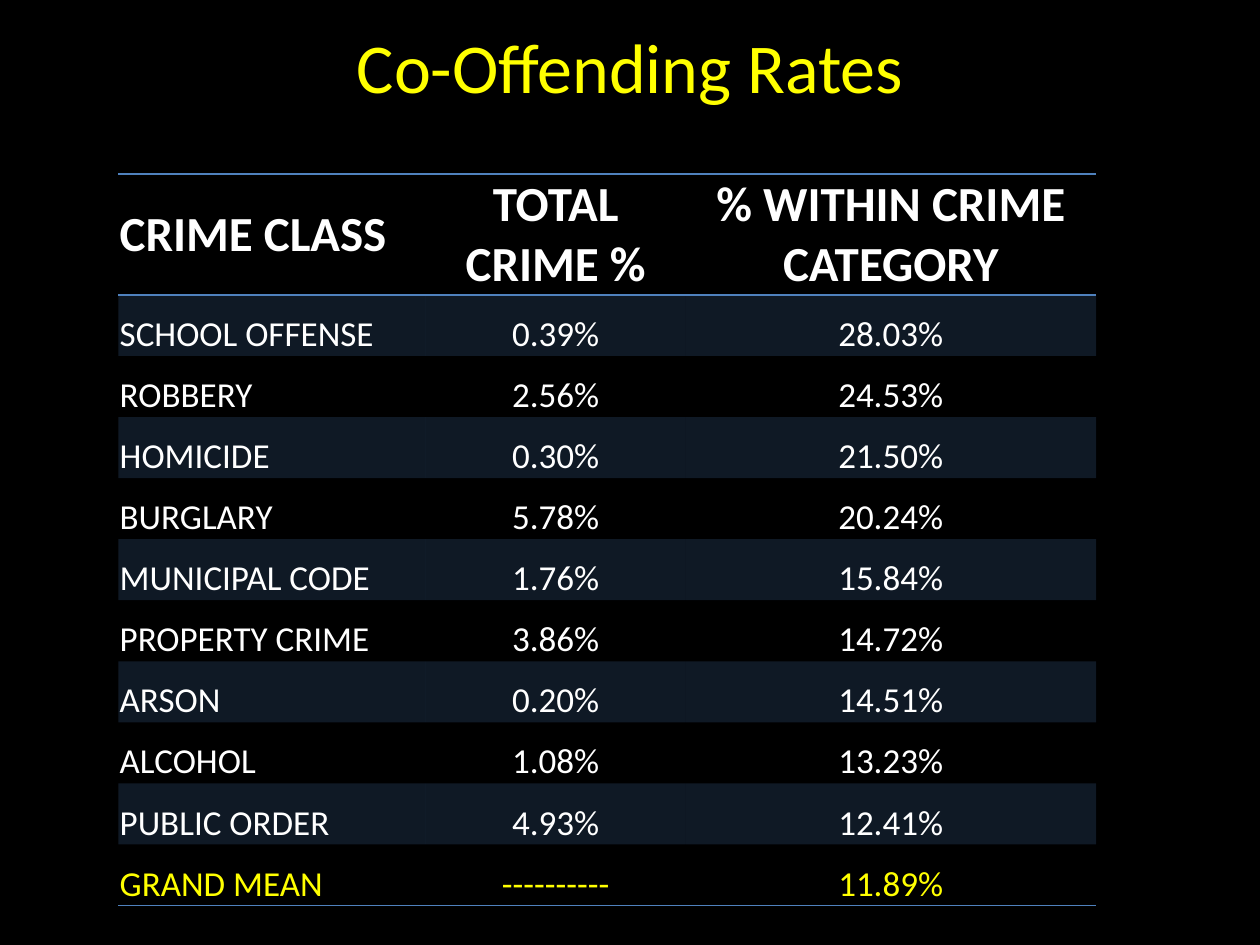
from typing import NamedTuple

from lxml.etree import SubElement
from pptx import Presentation
from pptx.dml.color import RGBColor
from pptx.enum.text import MSO_ANCHOR, PP_ALIGN
from pptx.oxml.ns import qn
from pptx.util import Inches, Pt

WIDE, HIGH = 10, 7.5
FONT = "Calibri"
HUES = {"back": "000000", "text": "FFFFFF", "mark": "FFFF00", "blue": "4F81BD"}
PLAIN = "{2D5ABB26-0587-4C30-8999-92F81FD0307C}"  # no style, no grid

# Table grid, in inches
LEFT, TOP, TALL = 0.94, 1.38, 5.8
COLS = (2.44, 2.06, 3.26)
HEAD = 0.95


class Rate(NamedTuple):
    crime: str
    total: str
    within: str


RATES = [
    Rate("CRIME CLASS", "TOTAL CRIME %", "% WITHIN CRIME CATEGORY"),
    Rate("SCHOOL OFFENSE", "0.39%", "28.03%"),
    Rate("ROBBERY", "2.56%", "24.53%"),
    Rate("HOMICIDE", "0.30%", "21.50%"),
    Rate("BURGLARY", "5.78%", "20.24%"),
    Rate("MUNICIPAL CODE", "1.76%", "15.84%"),
    Rate("PROPERTY CRIME", "3.86%", "14.72%"),
    Rate("ARSON", "0.20%", "14.51%"),
    Rate("ALCOHOL", "1.08%", "13.23%"),
    Rate("PUBLIC ORDER", "4.93%", "12.41%"),
    Rate("GRAND MEAN", "----------", "11.89%"),
]


def write(frame, text: str, *, size: int, hue: str = "text",
          bold: bool = False, align=PP_ALIGN.CENTER) -> None:
    para = frame.paragraphs[0]
    para.alignment = align
    run = para.add_run()
    run.text = text
    font = run.font
    font.name, font.size, font.bold = FONT, Pt(size), bold
    font.color.rgb = RGBColor.from_string(HUES[hue])


def rule(cell, side: str) -> None:
    """Draw a one-point border on side T or B of a cell."""
    line = SubElement(cell._tc.get_or_add_tcPr(), qn(f"a:ln{side}"), w=str(Pt(1)))
    SubElement(SubElement(line, qn("a:solidFill")), qn("a:srgbClr"), val=HUES["blue"])


def shade(cell, share: int) -> None:
    """Fill a cell with blue at a given percentage of opacity."""
    cell.fill.solid()
    cell.fill.fore_color.rgb = RGBColor.from_string(HUES["blue"])
    tint = next(cell._tc.tcPr.iterchildren(qn("a:solidFill")))[0]
    SubElement(tint, qn("a:alpha"), val=str(share * 1000))


def draw_cell(cell, text: str, row: int, col: int) -> None:
    head, last = row == 0, row == len(RATES) - 1
    cell.margin_left = cell.margin_right = cell.margin_top = Inches(0.01)
    cell.margin_bottom = 0
    cell.vertical_anchor = MSO_ANCHOR.MIDDLE if head else MSO_ANCHOR.BOTTOM
    write(cell.text_frame, text, size=28 if head else 20, bold=head,
          hue="mark" if last else "text",
          align=PP_ALIGN.CENTER if col else PP_ALIGN.LEFT)
    # Borders come before the fill in the cell's properties
    for side in "TB" if head else "B" if last else "":
        rule(cell, side)
    if row % 2:
        shade(cell, 20)
    else:
        cell.fill.background()


def draw_table(slide) -> None:
    table = slide.shapes.add_table(
        len(RATES), len(COLS), Inches(LEFT), Inches(TOP),
        Inches(sum(COLS)), Inches(TALL)).table
    table.first_row = table.horz_banding = False
    table._tbl.tblPr.find(qn("a:tableStyleId")).text = PLAIN
    for col, wide in zip(table.columns, COLS):
        col.width = Inches(wide)
    step = (TALL - HEAD) / (len(RATES) - 1)
    for row, rate in enumerate(RATES):
        table.rows[row].height = Inches(step if row else HEAD)
        for col, text in enumerate(rate):
            draw_cell(table.cell(row, col), text, row, col)


def draw_title(slide, text: str) -> None:
    title = slide.shapes.title
    title.left, title.top = Inches(WIDE * 0.05), Inches(0.12)
    title.width, title.height = Inches(WIDE * 0.9), Inches(0.8)
    title.text_frame.vertical_anchor = MSO_ANCHOR.MIDDLE
    write(title.text_frame, text, size=40, hue="mark")


def main() -> None:
    deck = Presentation()
    deck.slide_width, deck.slide_height = Inches(WIDE), Inches(HIGH)
    slide = deck.slides.add_slide(deck.slide_layouts[5])
    back = slide.background.fill
    back.solid()
    back.fore_color.rgb = RGBColor.from_string(HUES["back"])
    draw_title(slide, "Co-Offending Rates")
    draw_table(slide)
    deck.save("out.pptx")


if __name__ == "__main__":
    main()
